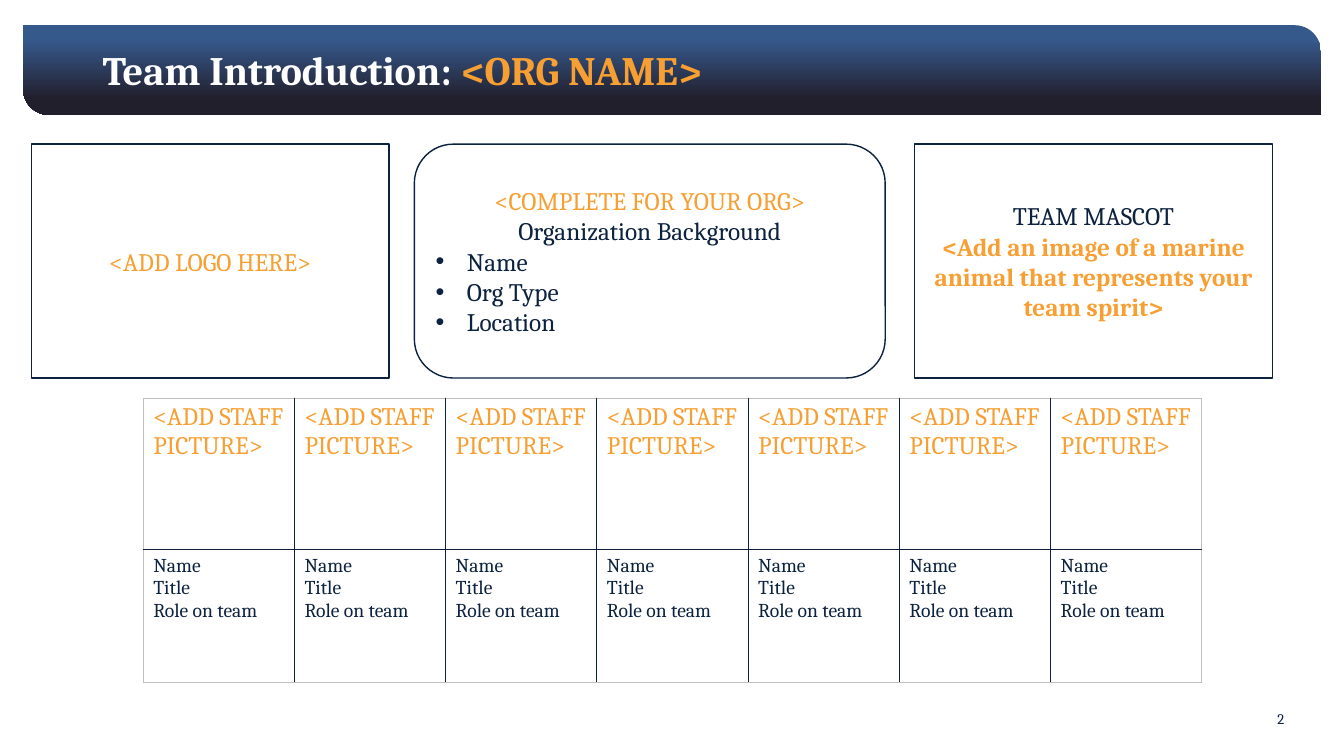
from dataclasses import dataclass

from lxml import etree
from pptx import Presentation
from pptx.dml.color import RGBColor
from pptx.enum.shapes import MSO_SHAPE
from pptx.enum.text import MSO_ANCHOR, PP_ALIGN
from pptx.oxml.ns import qn
from pptx.util import Inches, Pt

RECTANGLE = MSO_SHAPE.RECTANGLE
ROUNDED = MSO_SHAPE.ROUNDED_RECTANGLE
DIAGONAL_ROUNDED = MSO_SHAPE.ROUND_2_DIAG_RECTANGLE
MIDDLE = MSO_ANCHOR.MIDDLE
LEFT, CENTER = PP_ALIGN.LEFT, PP_ALIGN.CENTER


@dataclass(frozen=True)
class Theme:
    font: str = "Cambria"
    navy: str = "0C223E"
    orange: str = "F79F32"
    white: str = "FFFFFF"
    grid_edge: str = "BFBFBF"
    banner_top: str = "36598C"
    banner_bottom: str = "221F2D"
    title_size: float = 28.8
    body_size: float = 18
    staff_size: float = 14
    number_size: float = 10.5
    line_width: float = 1


THEME = Theme()
STAFF_COUNT = 7


def rgb(color):
    return RGBColor.from_string(color)


def style_font(font, size, color, bold=False):
    font.name = THEME.font
    font.size = Pt(size)
    font.color.rgb = rgb(color)
    font.bold = bold


def add_bullet(paragraph):
    properties = paragraph._p.get_or_add_pPr()
    properties.set("marL", str(Inches(0.31)))
    properties.set("indent", str(Inches(-0.31)))
    etree.SubElement(properties, qn("a:buFont")).set("typeface", "Arial")
    etree.SubElement(properties, qn("a:buChar")).set("char", "•")


def next_paragraph(text_frame, index):
    return text_frame.paragraphs[0] if index == 0 else text_frame.add_paragraph()


def add_banner(slide):
    shape = slide.shapes.add_shape(
        DIAGONAL_ROUNDED, Inches(0.23), Inches(0.25), Inches(12.87), Inches(0.89))
    shape.shadow.inherit = False
    shape.adjustments[0] = 0
    shape.adjustments[1] = 0.29
    shape.line.fill.background()
    shape.fill.gradient()
    shape.fill.gradient_angle = 270
    stops = ((0.16, THEME.banner_top), (0.82, THEME.banner_bottom))
    for stop, (position, color) in zip(shape.fill.gradient_stops, stops):
        stop.position = position
        stop.color.rgb = rgb(color)


def add_text(slide, left, top, width, height, runs, size):
    """Add one line of text; runs holds (text, color, bold)."""
    box = slide.shapes.add_textbox(
        Inches(left), Inches(top), Inches(width), Inches(height))
    text_frame = box.text_frame
    text_frame.word_wrap = True
    text_frame.vertical_anchor = MIDDLE
    paragraph = text_frame.paragraphs[0]
    paragraph.line_spacing = 0.9
    for text, color, bold in runs:
        run = paragraph.add_run()
        run.text = text
        style_font(run.font, size, color, bold)


def add_panel(slide, kind, left, width, lines):
    """Add an outlined panel; lines holds (text, color, bold, bulleted)."""
    shape = slide.shapes.add_shape(
        kind, Inches(left), Inches(1.43), Inches(width), Inches(2.32))
    shape.shadow.inherit = False
    shape.fill.solid()
    shape.fill.fore_color.rgb = rgb(THEME.white)
    shape.line.color.rgb = rgb(THEME.navy)
    shape.line.width = Pt(THEME.line_width)
    text_frame = shape.text_frame
    text_frame.word_wrap = True
    text_frame.vertical_anchor = MIDDLE
    for index, (text, color, bold, bulleted) in enumerate(lines):
        paragraph = next_paragraph(text_frame, index)
        paragraph.text = text
        paragraph.alignment = LEFT if bulleted else CENTER
        if bulleted:
            add_bullet(paragraph)
        style_font(paragraph.font, THEME.body_size, color, bold)


def add_borders(cell, colors):
    """Draw the left, right, top and bottom borders in the given colors."""
    properties = cell._tc.get_or_add_tcPr()
    for side, color in zip("LRTB", colors):
        line = etree.SubElement(properties, qn(f"a:ln{side}"))
        line.set("w", str(Pt(THEME.line_width)))
        fill = etree.SubElement(line, qn("a:solidFill"))
        etree.SubElement(fill, qn("a:srgbClr")).set("val", color)


def add_staff_table(slide):
    rows = (
        (1.5, ("<ADD STAFF PICTURE>",), THEME.body_size, THEME.orange),
        (1.32, ("Name", "Title", "Role on team"), THEME.staff_size, THEME.navy),
    )
    table = slide.shapes.add_table(
        len(rows), STAFF_COUNT, Inches(1.42), Inches(3.95),
        Inches(1.5 * STAFF_COUNT), Inches(2.82)).table
    table.first_row = False
    table.horz_banding = False
    for row, (height, lines, size, color) in enumerate(rows):
        table.rows[row].height = Inches(height)
        for column in range(STAFF_COUNT):
            cell = table.cell(row, column)
            outer = (column == 0, column == STAFF_COUNT - 1,
                     row == 0, row == len(rows) - 1)
            add_borders(cell, [THEME.grid_edge if edge else THEME.navy
                               for edge in outer])
            cell.fill.background()
            for index, text in enumerate(lines):
                paragraph = next_paragraph(cell.text_frame, index)
                paragraph.text = text
                style_font(paragraph.font, size, color)


def main():
    presentation = Presentation()
    presentation.slide_width = Inches(13.33)
    presentation.slide_height = Inches(7.5)
    slide = presentation.slides.add_slide(presentation.slide_layouts[6])

    # Banner, slide number and title
    add_banner(slide)
    add_text(slide, 12.57, 7, 0.6, 0.28, [("2", THEME.navy, False)],
             THEME.number_size)
    add_text(slide, 0.92, 0.42, 11.5, 0.59,
             [("Team Introduction: ", THEME.white, True),
              ("<ORG NAME>", THEME.orange, True)], THEME.title_size)

    # Staff grid
    add_staff_table(slide)

    # Organization panels
    add_panel(slide, RECTANGLE, 0.31, 3.55,
              [("<ADD LOGO HERE>", THEME.orange, False, False)])
    add_panel(slide, ROUNDED, 4.11, 4.67, [
        ("<COMPLETE FOR YOUR ORG>", THEME.orange, False, False),
        ("Organization Background", THEME.navy, False, False),
        *((text, THEME.navy, False, True)
          for text in ("Name", "Org Type", "Location")),
    ])
    add_panel(slide, RECTANGLE, 9.07, 3.55, [
        ("TEAM MASCOT", THEME.navy, False, False),
        ("<Add an image of a marine animal that represents your team spirit>",
         THEME.orange, True, False),
    ])

    presentation.save("out.pptx")


if __name__ == "__main__":
    main()
